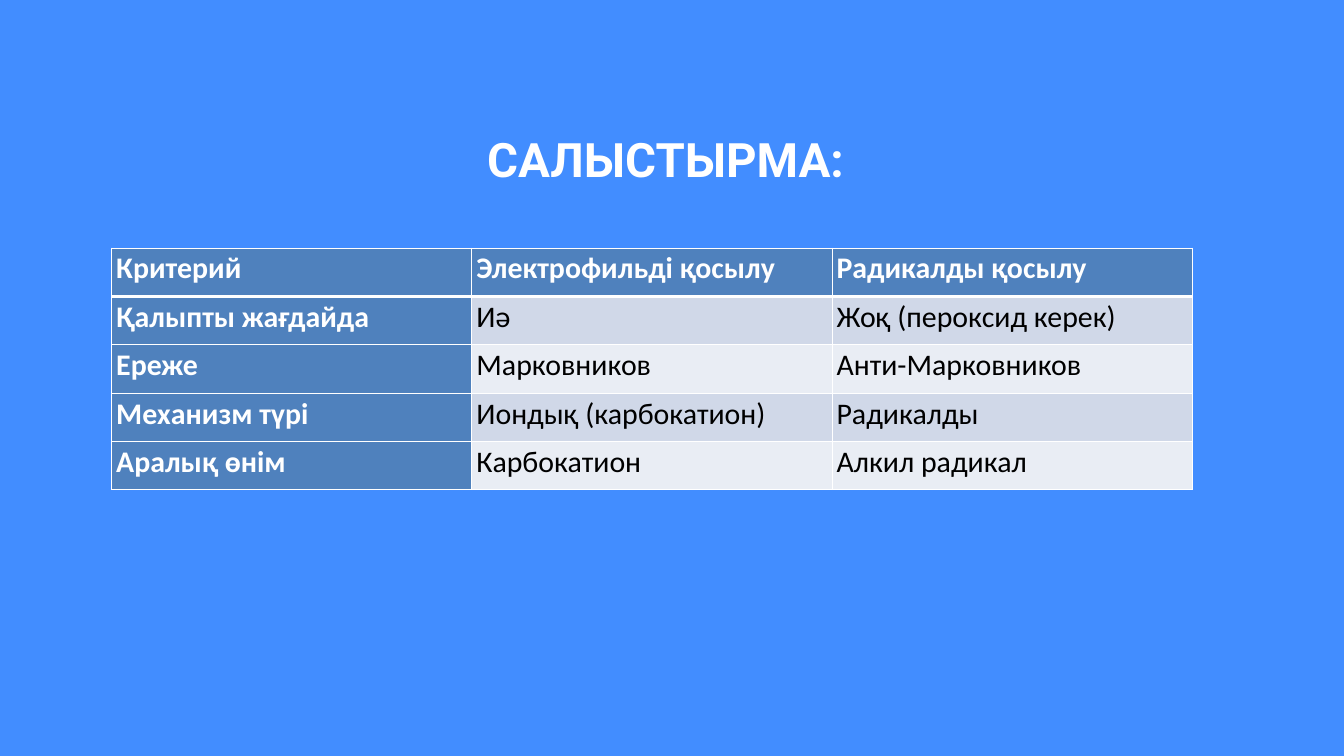
"""Build a slide comparing electrophilic and radical addition."""
from dataclasses import dataclass
from typing import Any

from lxml.etree import SubElement
from pptx import Presentation
from pptx.dml.color import RGBColor
from pptx.enum.text import MSO_ANCHOR, MSO_AUTO_SIZE, PP_ALIGN
from pptx.oxml.ns import qn
from pptx.util import Inches, Pt

WHITE, BLACK, SKY, STEEL = "FFFFFF", "000000", "428DFF", "4F81BD"
BANDS = ("D0D8E8", "E9EDF4")
COLUMN_WIDTHS = (5.36, 5.36, 5.37)
ROW_HEIGHT = 0.72
TITLE_FRAME = {
    "margin_left": 0, "margin_top": 0, "margin_right": 0, "margin_bottom": 0,
    "word_wrap": True, "vertical_anchor": MSO_ANCHOR.TOP,
    "auto_size": MSO_AUTO_SIZE.SHAPE_TO_FIT_TEXT,
}
CELL_FRAME = {
    "margin_left": Inches(0.07), "margin_right": Inches(0.07),
    "margin_top": 0, "margin_bottom": 0, "vertical_anchor": MSO_ANCHOR.TOP,
}
ROWS = (
    ("Критерий", "Электрофильді қосылу", "Радикалды қосылу"),
    ("Қалыпты жағдайда", "Иә", "Жоқ (пероксид керек)"),
    ("Ереже", "Марковников", "Анти-Марковников"),
    ("Механизм түрі", "Иондық (карбокатион)", "Радикалды"),
    ("Аралық өнім", "Карбокатион", "Алкил радикал"),
)


@dataclass(frozen=True)
class TextStyle:
    font: str
    size: float
    color: str
    bold: bool
    spacing: Any


TITLE = TextStyle("Roboto", 50.8, WHITE, True, Pt(71))
HEADING = TextStyle("Calibri", 32, WHITE, True, 1.07)
VALUE = TextStyle("Calibri", 32, BLACK, False, 1.07)


def apply(target: Any, values: dict[str, Any]) -> None:
    for name, value in values.items():
        setattr(target, name, value)


def paint(fill: Any, color: str) -> None:
    fill.solid()
    fill.fore_color.rgb = RGBColor.from_string(color)


def write(frame: Any, text: str, style: TextStyle) -> None:
    para = frame.paragraphs[0]
    apply(para, {"alignment": PP_ALIGN.LEFT, "line_spacing": style.spacing,
                 "space_before": Pt(0), "space_after": Pt(0)})
    span = para.add_run()
    span.text = text
    apply(span.font, {"name": style.font, "size": Pt(style.size), "bold": style.bold})
    paint(span.font.fill, style.color)


def add_borders(cell: Any, widths: dict[str, float]) -> None:
    properties = cell._tc.get_or_add_tcPr()
    for side, width in widths.items():
        line = SubElement(properties, qn(f"a:ln{side}"), w=str(Pt(width)))
        fill = SubElement(line, qn("a:solidFill"))
        SubElement(fill, qn("a:srgbClr"), val=WHITE)


def format_cell(cell: Any, row: int, column: int) -> None:
    heading = row == 0 or column == 0
    apply(cell, CELL_FRAME)
    write(cell.text_frame, ROWS[row][column], HEADING if heading else VALUE)
    add_borders(cell, {"L": 1, "R": 1, "T": 3 if row == 1 else 1,
                       "B": 3 if row == 0 else 1})
    paint(cell.fill, STEEL if heading else BANDS[(row - 1) % 2])


def add_title(page: Any) -> None:
    box = page.shapes.title
    apply(box, {"left": Inches(7.25), "top": Inches(1.79),
                "width": Inches(19.48), "height": Inches(1.93)})
    apply(box.text_frame, TITLE_FRAME)
    write(box.text_frame, "САЛЫСТЫРМА:", TITLE)


def add_comparison(page: Any) -> None:
    table = page.shapes.add_table(
        len(ROWS), len(COLUMN_WIDTHS), Inches(1.66), Inches(3.69),
        Inches(sum(COLUMN_WIDTHS)), Inches(ROW_HEIGHT * len(ROWS))).table
    for column, width in zip(table.columns, COLUMN_WIDTHS):
        column.width = Inches(width)
    for row, texts in enumerate(ROWS):
        table.rows[row].height = Inches(ROW_HEIGHT)
        for column in range(len(texts)):
            format_cell(table.cell(row, column), row, column)


def main() -> None:
    deck = Presentation()
    apply(deck, {"slide_width": Inches(20), "slide_height": Inches(11.25)})
    page = deck.slides.add_slide(deck.slide_layouts.get_by_name("Title Only"))
    paint(page.background.fill, SKY)
    add_title(page)
    add_comparison(page)
    deck.save("out.pptx")


if __name__ == "__main__":
    main()
